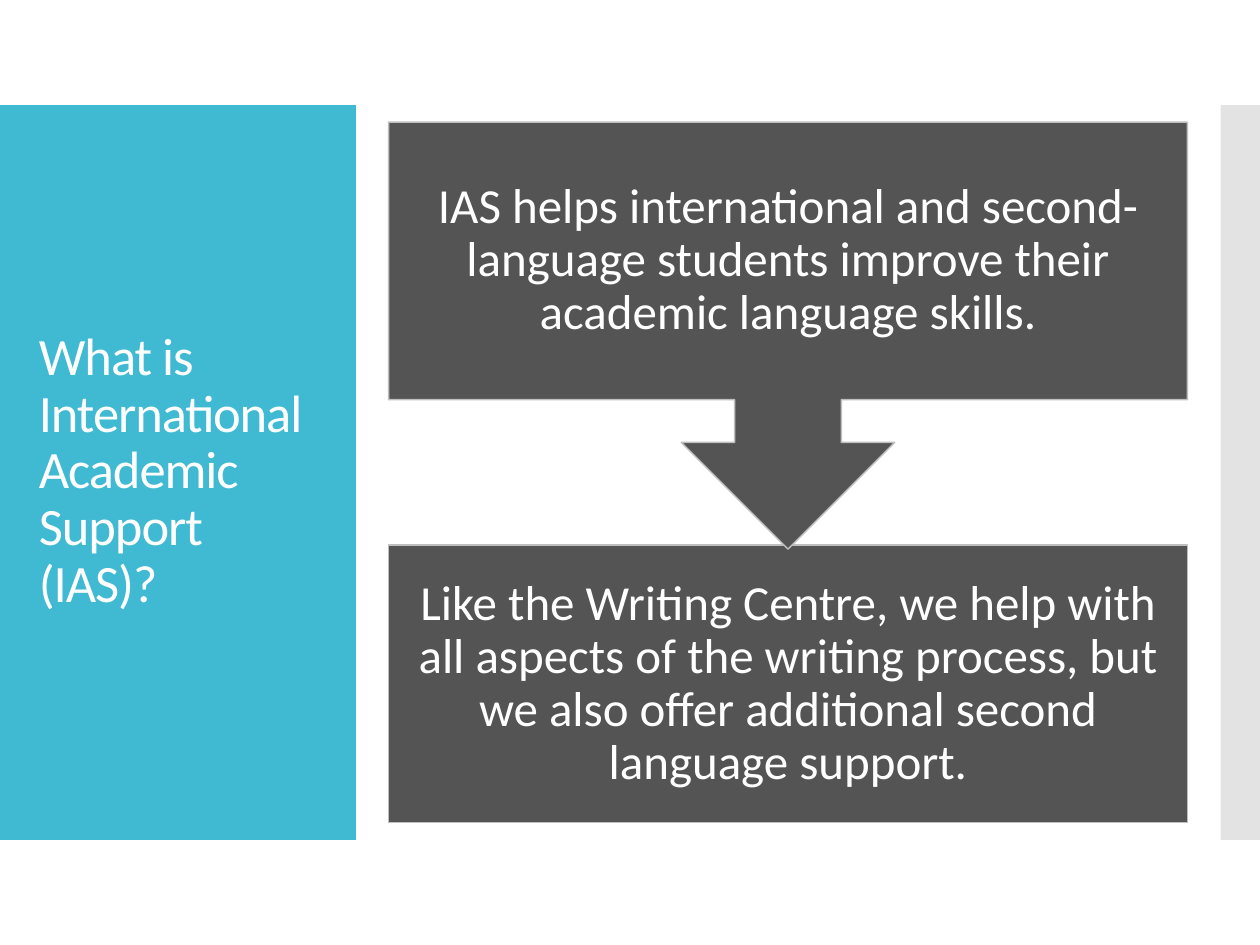
"""Build the slide that explains International Academic Support."""
from lxml.etree import SubElement
from pptx import Presentation
from pptx.dml.color import RGBColor
from pptx.enum.shapes import MSO_SHAPE as Shape
from pptx.enum.text import MSO_ANCHOR as Anchor, PP_ALIGN as Align
from pptx.oxml.ns import qn
from pptx.util import Pt

WHITE = RGBColor(0xFF, 0xFF, 0xFF)
TEAL = RGBColor(0x40, 0xBA, 0xD2)
SILVER = RGBColor(0xC8, 0xC8, 0xC8)
CHARCOAL = RGBColor(0x54, 0x54, 0x54)
OUTLINE = RGBColor(0xBF, 0xBF, 0xBF)


def add_shape(kind, left, top, width, height, fill, line=None):
    shape = page.shapes.add_shape(kind, Pt(left), Pt(top), Pt(width), Pt(height))
    shape.shadow.inherit = False
    shape.fill.solid()
    shape.fill.fore_color.rgb = fill
    if line is None:
        shape.line.fill.background()
    else:
        shape.line.color.rgb = line
        shape.line.width = Pt(0.85)
    return shape


def add_text(text, left, top, width, height, size, align=Align.LEFT,
             inset_x=7.2, inset_y=3.6, tracking=None):
    box = page.shapes.add_textbox(Pt(left), Pt(top), Pt(width), Pt(height))
    frame = box.text_frame
    frame.word_wrap = True
    frame.vertical_anchor = Anchor.MIDDLE
    frame.margin_left = frame.margin_right = Pt(inset_x)
    frame.margin_top = frame.margin_bottom = Pt(inset_y)
    para = frame.paragraphs[0]
    para.alignment = align
    para.line_spacing = 0.9
    span = para.add_run()
    span.text = text
    span.font.name = "Calibri"
    span.font.size = Pt(size)
    span.font.color.rgb = WHITE
    if tracking is not None:
        span.font._element.set("spc", str(round(tracking * 100)))


deck = Presentation()
deck.slide_width, deck.slide_height = Pt(720), Pt(540)
page = deck.slides.add_slide(deck.slide_layouts[6])

BAND_TOP, BAND_HEIGHT = 60, 420
add_shape(Shape.RECTANGLE, 0, BAND_TOP, 203.4, BAND_HEIGHT, TEAL)
edge = add_shape(Shape.RECTANGLE, 697.5, BAND_TOP, 22.5, BAND_HEIGHT, SILVER)
edge_color = edge.fill._xPr.find(qn("a:solidFill"))[0]
SubElement(edge_color, qn("a:alpha")).set("val", "50000")

add_text("What is International Academic Support (IAS)?",
         15.12, 88.5, 174.24, 362.4, size=30, tracking=-0.6)

STEP_LEFT, STEP_WIDTH, STEP_HEIGHT = 222, 456.5, 158.6
FIRST_TOP, SECOND_TOP = 69.8, 311.5
add_shape(Shape.RECTANGLE, STEP_LEFT, SECOND_TOP, STEP_WIDTH, STEP_HEIGHT, CHARCOAL, OUTLINE)
callout = add_shape(Shape.UP_ARROW_CALLOUT, STEP_LEFT, FIRST_TOP, STEP_WIDTH, 244,
                    CHARCOAL, OUTLINE)
callout.rotation = 180

steps = [
    (FIRST_TOP, "IAS helps international and second-language students improve "
                "their academic language skills."),
    (SECOND_TOP, "Like the Writing Centre, we help with all aspects of the writing "
                 "process, but we also offer additional second language support."),
]
for top, text in steps:
    add_text(text, STEP_LEFT, top, STEP_WIDTH, STEP_HEIGHT, size=28,
             align=Align.CENTER, inset_x=15.7, inset_y=15.7)

deck.save("out.pptx")
